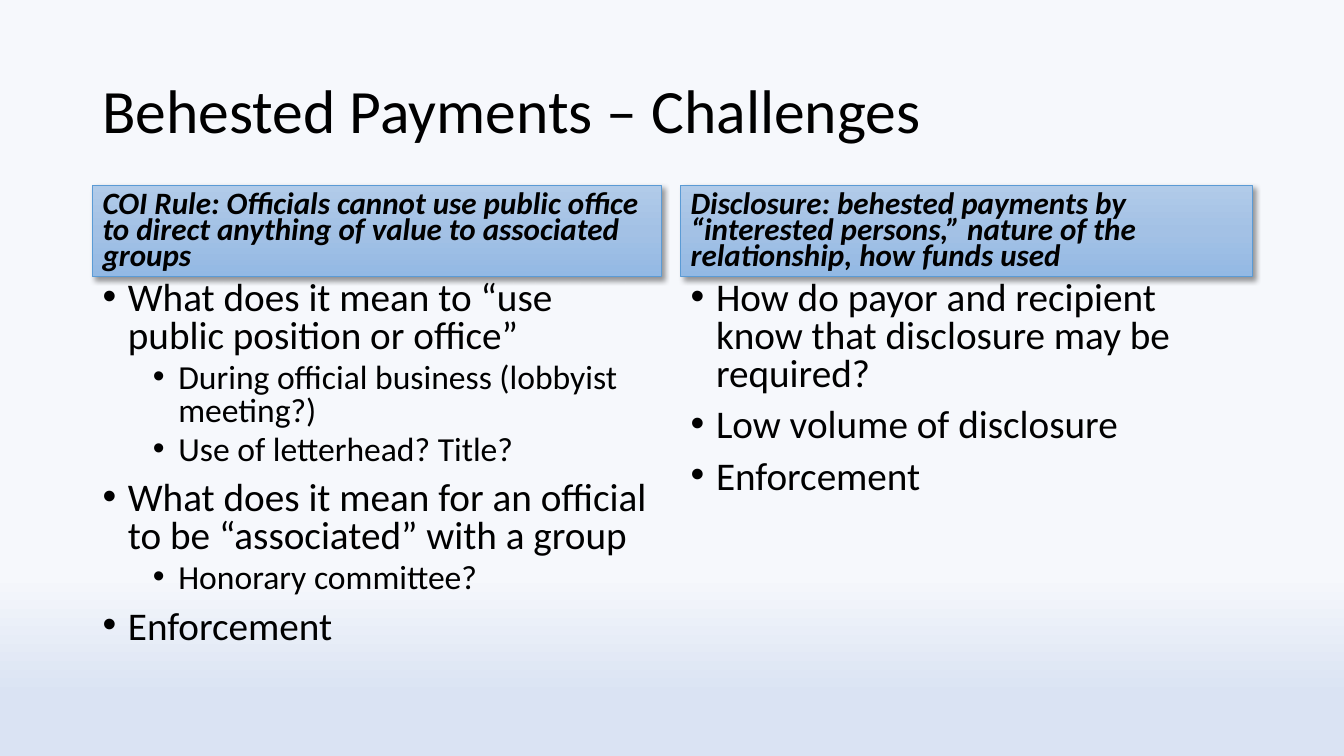
"""Build the slide on the challenges of behested payments."""
import pptx
import pptx.dml.color
import pptx.enum.text
import pptx.oxml
import pptx.oxml.ns
import pptx.util
from lxml import etree

Cm = pptx.util.Cm
Pt = pptx.util.Pt
RGBColor = pptx.dml.color.RGBColor
qn = pptx.oxml.ns.qn
ANCHOR = pptx.enum.text.MSO_ANCHOR

BLACK = RGBColor(0x00, 0x00, 0x00)
BORDER_BLUE = RGBColor(0x5B, 0x9B, 0xD5)
BACKGROUND_STOPS = [
    (76, RGBColor(0xF6, 0xF8, 0xFC)),
    (92, RGBColor(0xDA, 0xE3, 0xF3)),
    (100, RGBColor(0xDA, 0xE3, 0xF3)),
    (100, RGBColor(0xC7, 0xD5, 0xED)),
]
HEADING_STOPS = [
    (0, RGBColor(0xB1, 0xCB, 0xE9)),
    (50, RGBColor(0xA3, 0xC1, 0xE5)),
    (100, RGBColor(0x93, 0xB9, 0xE4)),
]
FONT = "Calibri"
LEVEL_STYLES = [(28, 10, 0.64), (24, 5, 1.91)]
BULLET_INDENT = 0.64

COLUMNS = [
    (2.33, 14.33,
     "COI Rule: Officials cannot use public office to direct anything of value to associated groups",
     [(0, "What does it mean to “use public position or office”"),
      (1, "During official business (lobbyist meeting?)"),
      (1, "Use of letterhead? Title?"),
      (0, "What does it mean for an official to be “associated” with a group"),
      (1, "Honorary committee?"),
      (0, "Enforcement")]),
    (17.15, 14.4,
     "Disclosure: behested payments by “interested persons,” nature of the relationship, how funds used",
     [(0, "How do payor and recipient know that disclosure may be required?"),
      (0, "Low volume of disclosure"),
      (0, "Enforcement")]),
]


def set_gradient(fill, element, stops):
    fill.gradient()
    fill.gradient_angle = 270
    stop_list = next(element.iter(qn("a:gsLst")))
    for stop in list(stop_list):
        stop_list.remove(stop)
    for percent, color in stops:
        stop = etree.SubElement(stop_list, qn("a:gs"), pos=str(percent * 1000))
        etree.SubElement(stop, qn("a:srgbClr"), val=str(color))


def format_paragraph(paragraph, size, line_spacing, space_before):
    paragraph.alignment = pptx.enum.text.PP_ALIGN.LEFT
    paragraph.line_spacing = line_spacing
    paragraph.space_before = Pt(space_before)
    paragraph.space_after = Pt(0)
    for run in paragraph.runs:
        run.font.name = FONT
        run.font.size = Pt(size)
        run.font.color.rgb = BLACK


presentation = pptx.Presentation()
presentation.slide_width = Cm(33.87)
presentation.slide_height = Cm(19.05)
slide = presentation.slides.add_slide(presentation.slide_layouts[4])
set_gradient(slide.background.fill, slide.element, BACKGROUND_STOPS)

title, *bodies = slide.placeholders
title.left, title.top, title.width, title.height = Cm(2.33), Cm(1.01), Cm(29.21), Cm(3.68)
title.text_frame.text = "Behested Payments – Challenges"
title.text_frame.auto_size = pptx.enum.text.MSO_AUTO_SIZE.NONE
title.text_frame.vertical_anchor = ANCHOR.MIDDLE
format_paragraph(title.text_frame.paragraphs[0], 44, 0.9, 0)

for (left, width, heading_text, items), heading, body in zip(COLUMNS, bodies[::2], bodies[1::2]):
    for shape, top, height, anchor in [
        (heading, 4.68, 2.29, ANCHOR.BOTTOM),
        (body, 6.97, 10.23, ANCHOR.TOP),
    ]:
        shape.left, shape.top, shape.width, shape.height = Cm(left), Cm(top), Cm(width), Cm(height)
        shape.text_frame.auto_size = pptx.enum.text.MSO_AUTO_SIZE.NONE
        shape.text_frame.vertical_anchor = anchor

    set_gradient(heading.fill, heading.element, HEADING_STOPS)
    heading.line.color.rgb = BORDER_BLUE
    heading.line.width = Pt(0.5)
    heading.shadow.inherit = False
    effects = next(heading.element.iter(qn("a:effectLst")))
    shadow = etree.SubElement(effects, qn("a:outerShdw"), blurRad=str(Pt(4)), dist=str(Pt(3)),
                              dir="2700000", algn="tl", rotWithShape="0")
    shadow_color = etree.SubElement(shadow, qn("a:srgbClr"), val=str(BLACK))
    etree.SubElement(shadow_color, qn("a:alpha"), val="40000")

    heading.text_frame.text = heading_text
    heading_paragraph = heading.text_frame.paragraphs[0]
    format_paragraph(heading_paragraph, 22.2, 0.7, 10)
    heading_paragraph.runs[0].font.bold = True
    heading_paragraph.runs[0].font.italic = True

    body.text_frame.text = "\n".join(text for level, text in items)
    for paragraph, (level, text) in zip(body.text_frame.paragraphs, items):
        size, space_before, margin = LEVEL_STYLES[level]
        paragraph.level = level
        format_paragraph(paragraph, size, 0.8, space_before)
        properties = paragraph._p.get_or_add_pPr()
        properties.set("marL", str(Cm(margin)))
        properties.set("indent", str(-Cm(BULLET_INDENT)))
        etree.SubElement(properties, qn("a:buFont"), typeface="Arial")
        etree.SubElement(properties, qn("a:buChar"), char="•")

presentation.save("out.pptx")
